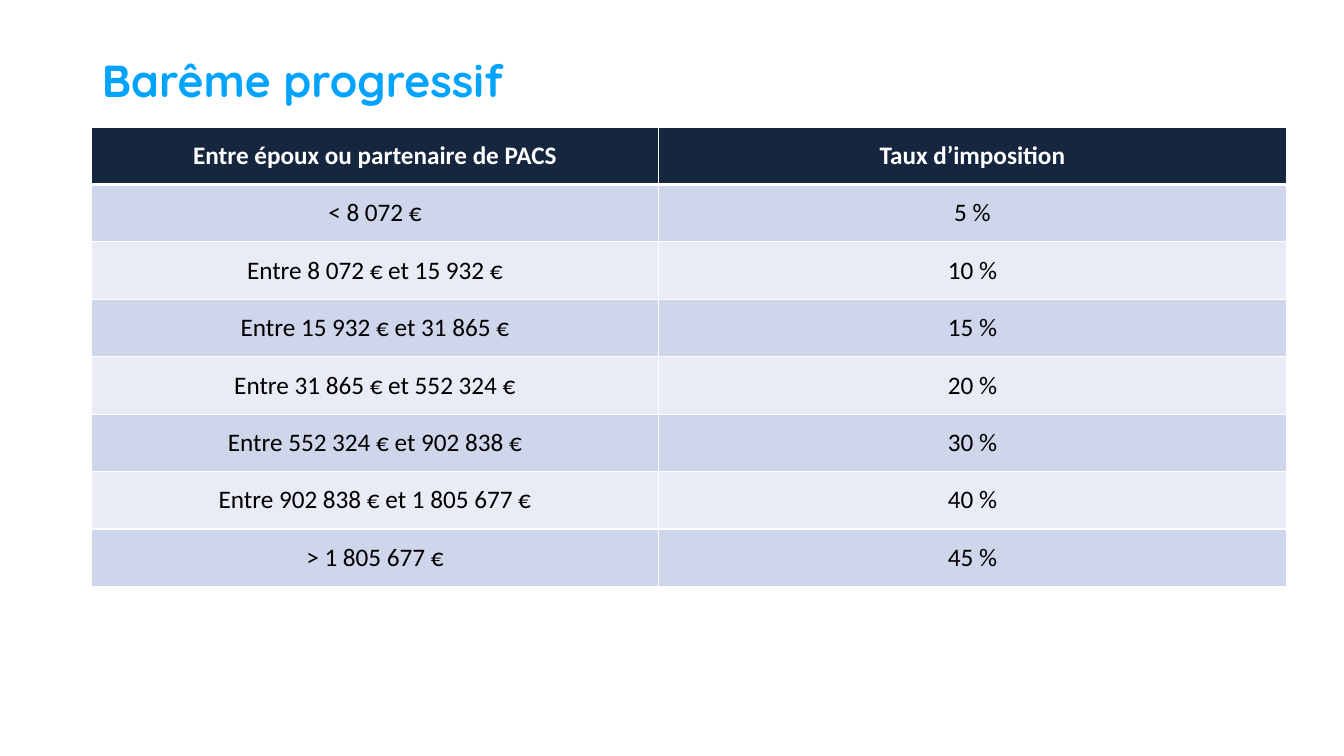
from lxml import etree
from pptx import Presentation
from pptx.dml.color import RGBColor
from pptx.enum.text import MSO_ANCHOR, MSO_AUTO_SIZE, PP_ALIGN
from pptx.oxml.ns import qn
from pptx.util import Inches, Pt

TOP, MIDDLE = MSO_ANCHOR.TOP, MSO_ANCHOR.MIDDLE
LEFT, CENTER = PP_ALIGN.LEFT, PP_ALIGN.CENTER
NO_FIT = MSO_AUTO_SIZE.NONE

SKY = RGBColor(0x00, 0xA4, 0xFF)
NAVY = RGBColor(0x15, 0x26, 0x3E)
WHITE = RGBColor(0xFF, 0xFF, 0xFF)
BLACK = RGBColor(0x00, 0x00, 0x00)
BANDS = RGBColor(0xCF, 0xD5, 0xEA), RGBColor(0xE9, 0xEB, 0xF5)

TITLE = {"name": "Quicksand", "size": Pt(32), "bold": True}
HEAD = {"name": "Calibri", "size": Pt(18), "bold": True}
BODY = {"name": "Calibri", "size": Pt(18), "bold": False}
INSETS = {"margin_left": Inches(0.05), "margin_right": Inches(0.05),
          "margin_top": 0, "margin_bottom": 0, "vertical_anchor": MIDDLE}

WIDTHS = 5.62, 6.23
HEIGHT = 0.57
RATES = [
    ("Entre époux ou partenaire de PACS", "Taux d’imposition"),
    ("< 8 072 €", "5 %"),
    ("Entre 8 072 € et 15 932 €", "10 %"),
    ("Entre 15 932 € et 31 865 €", "15 %"),
    ("Entre 31 865 € et 552 324 €", "20 %"),
    ("Entre 552 324 € et 902 838 €", "30 %"),
    ("Entre 902 838 € et 1 805 677 €", "40 %"),
    ("> 1 805 677 €", "45 %"),
]


def apply(item, values):
    for name, value in values.items():
        setattr(item, name, value)


def write(frame, text, font, color, align):
    frame.text = text
    para = frame.paragraphs[0]
    para.alignment = align
    run = para.runs[0]
    apply(run.font, font)
    run.font.color.rgb = color
    return para


def add_title(slide, text):
    title = slide.shapes.title
    apply(title, {"left": Inches(0.91), "top": Inches(0.53),
                  "width": Inches(11.22), "height": Inches(0.39)})
    frame = title.text_frame
    apply(frame, {"word_wrap": True, "auto_size": NO_FIT,
                  "vertical_anchor": TOP})
    para = write(frame, text, TITLE, SKY, LEFT)
    apply(para, {"line_spacing": 0.9, "space_before": Pt(0)})


def set_edges(cell, top, bottom):
    """Draw white cell borders; top and bottom are widths in points."""
    props = cell._tc.get_or_add_tcPr()
    sides = {"lnL": 1, "lnR": 1, "lnT": top, "lnB": bottom}
    for place, (side, width) in enumerate(sides.items()):
        line = etree.Element(qn(f"a:{side}"), w=str(Pt(width)))
        fill = etree.SubElement(line, qn("a:solidFill"))
        etree.SubElement(fill, qn("a:srgbClr"), val=str(WHITE))
        props.insert(place, line)


def style_cell(cell, text, row):
    head = row == 0
    apply(cell, INSETS)
    cell.fill.solid()
    cell.fill.fore_color.rgb = NAVY if head else BANDS[(row - 1) % 2]
    font, color = (HEAD, WHITE) if head else (BODY, BLACK)
    write(cell.text_frame, text, font, color, CENTER)
    set_edges(cell, 3 if row == 1 else 1, 3 if head else 1)


def add_rates(slide, rates):
    count = len(rates)
    table = slide.shapes.add_table(
        count, len(WIDTHS), Inches(0.91), Inches(1.26),
        Inches(sum(WIDTHS)), Inches(HEIGHT * count)).table
    for col, width in zip(table.columns, WIDTHS):
        col.width = Inches(width)
    for row, texts in enumerate(rates):
        table.rows[row].height = Inches(HEIGHT)
        for col, text in enumerate(texts):
            style_cell(table.cell(row, col), text, row)


def main():
    deck = Presentation()
    deck.slide_width, deck.slide_height = Inches(13.33), Inches(7.5)
    slide = deck.slides.add_slide(deck.slide_layouts[5])
    add_title(slide, "Barême progressif")
    add_rates(slide, RATES)
    deck.save("out.pptx")


if __name__ == "__main__":
    main()
